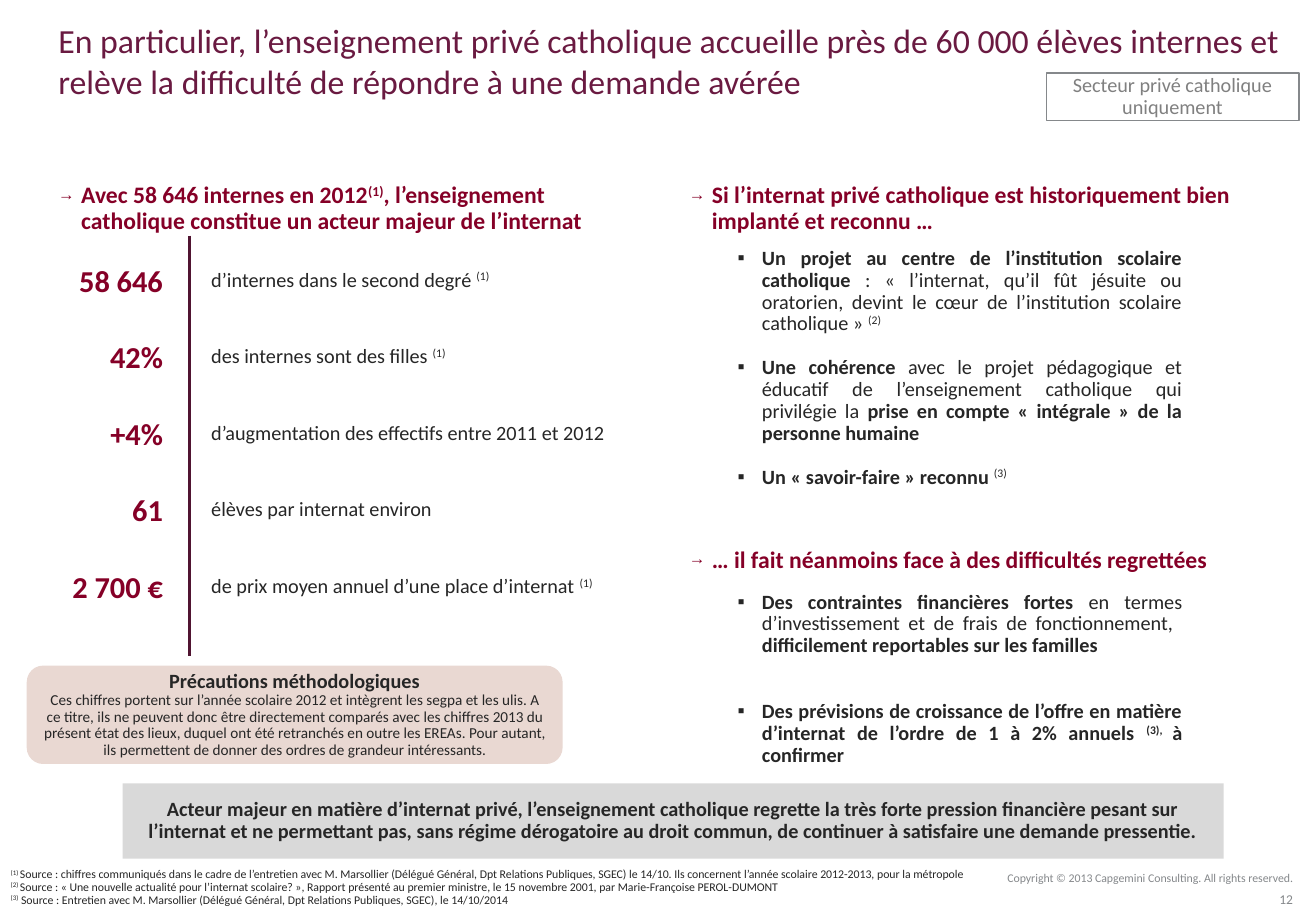
from dataclasses import dataclass
from lxml.etree import SubElement
from pptx import Presentation
from pptx.dml.color import RGBColor
from pptx.enum.shapes import MSO_CONNECTOR, MSO_SHAPE
from pptx.enum.text import MSO_ANCHOR, MSO_AUTO_SIZE, PP_ALIGN
from pptx.oxml.ns import qn
from pptx.util import Inches, Pt


@dataclass(frozen=True)
class Theme:
    font: str = "Calibri"
    plum: str = "6A1A41"
    wine: str = "850027"
    rule: str = "501431"
    ink: str = "262626"
    gray: str = "808080"
    edge: str = "85888B"
    white: str = "FFFFFF"
    band: str = "D9D9D9"
    blush: str = "E9D8D2"
    title: int = 20
    figure: int = 18
    head: int = 14
    body: int = 12
    small: int = 9
    page: int = 8
    note: int = 7
    leading: float = 0.9


class Board:
    def __init__(self, slide, theme):
        self.slide = slide
        self.theme = theme

    def place(self, shape, area):
        shape.left, shape.top, shape.width, shape.height = map(Inches, area)

    def bullet(self, para, mark, indent, scale):
        props = para._p.get_or_add_pPr()
        props.set("marL", str(Inches(indent)))
        props.set("indent", str(-Inches(indent)))
        SubElement(props, qn("a:buSzPct"), val=str(scale * 1000))
        SubElement(props, qn("a:buFont"), typeface="Arial")
        SubElement(props, qn("a:buChar"), char=mark)

    def fill(self, shape, items, size, color, align=PP_ALIGN.LEFT,
             anchor=MSO_ANCHOR.TOP, gap=0, leading=None, mark=None,
             indent=0.2, scale=100):
        frame = shape.text_frame
        frame.word_wrap = True
        frame.auto_size = MSO_AUTO_SIZE.NONE
        frame.vertical_anchor = anchor
        for index, item in enumerate(items):
            para = frame.add_paragraph() if index else frame.paragraphs[0]
            para.alignment = align
            para.line_spacing = leading or self.theme.leading
            para.space_before = Pt(gap if index else 0)
            if mark:
                self.bullet(para, mark, indent, scale)
            for text, flags in [(item, "")] if isinstance(item, str) else item:
                run = para.add_run()
                run.text = text
                font = run.font
                font.name = self.theme.font
                font.size = Pt(self.theme.small if "m" in flags else size)
                font.bold = "b" in flags
                font.color.rgb = RGBColor.from_string(color)
                if "s" in flags:
                    run._r.get_or_add_rPr().set("baseline", "30000")

    def title(self, area, text):
        shape = self.slide.shapes.title
        self.place(shape, area)
        self.fill(shape, [text], self.theme.title, self.theme.plum,
                  anchor=MSO_ANCHOR.MIDDLE, leading=1.0)

    def list(self, slot, area, items, gap):
        shape = self.slide.placeholders[slot]
        self.place(shape, area)
        self.fill(shape, items, self.theme.body, self.theme.ink,
                  PP_ALIGN.JUSTIFY, gap=gap, mark="▪")

    def text(self, area, items, size, color, **style):
        box = self.slide.shapes.add_textbox(*map(Inches, area))
        self.fill(box, items, size, color, **style)

    def head(self, area, item):
        self.text(area, [item], self.theme.head, self.theme.wine,
                  mark="→", indent=0.19, scale=70)

    def block(self, kind, area, paint, items, color, edge=None):
        shape = self.slide.shapes.add_shape(kind, *map(Inches, area))
        shape.shadow.inherit = False
        shape.fill.solid()
        shape.fill.fore_color.rgb = RGBColor.from_string(paint)
        if edge:
            shape.line.color.rgb = RGBColor.from_string(edge)
            shape.line.width = Pt(0.75)
        else:
            shape.line.fill.background()
        self.fill(shape, items, self.theme.body, color, PP_ALIGN.CENTER,
                  MSO_ANCHOR.MIDDLE)

    def line(self, ends, color, width):
        rule = self.slide.shapes.add_connector(
            MSO_CONNECTOR.STRAIGHT, *map(Inches, ends))
        rule.line.color.rgb = RGBColor.from_string(color)
        rule.line.width = Pt(width)
        SubElement(rule._element.spPr, qn("a:effectLst"))


def main():
    deck = Presentation()
    deck.slide_width, deck.slide_height = Inches(10.83), Inches(7.5)
    theme = Theme()
    board = Board(deck.slides.add_slide(deck.slide_layouts[3]), theme)

    board.title((0.38, 0.08, 10.45, 0.84),
                "En particulier, l’enseignement privé catholique accueille près de 60 000 élèves internes et relève la difficulté de répondre à une demande avérée")
    board.block(MSO_SHAPE.RECTANGLE, (8.61, 0.6, 2.08, 0.39), theme.white,
                ["Secteur privé catholique uniquement"], theme.gray, theme.edge)

    board.head((0.38, 1.46, 4.81, 0.53), [
        ("Avec 58 646 internes en 2012", "b"), ("(1)", "bs"),
        (", l’enseignement catholique constitue un acteur majeur de l’internat", "b")])
    board.head((5.57, 1.46, 4.8, 0.53), [
        ("Si l’internat privé catholique est historiquement bien implanté et reconnu …", "b")])
    board.head((5.57, 4.46, 4.8, 0.31), [
        ("… il fait néanmoins face à des difficultés regrettées", "b")])

    facts = [
        ("58 646", [("d’internes dans le second degré ", ""), ("(1)", "s")]),
        ("42%", [("des internes sont des filles ", ""), ("(1)", "s")]),
        ("+4%", "d’augmentation des effectifs entre 2011 et 2012"),
        ("61", "élèves par internat environ"),
        ("2 700 €", [("de prix moyen annuel d’une place d’internat ", ""), ("(1)", "s")]),
    ]
    for row, (figure, label) in enumerate(facts):
        top = 2.14 + 0.63 * row
        board.text((0.14, top, 1.3, 0.37), [[(figure, "b")]],
                   theme.figure, theme.wine, align=PP_ALIGN.RIGHT)
        board.text((1.64, top + 0.03, 3.86, 0.28), [label], theme.body, theme.ink)
    board.line((1.56, 1.94, 1.56, 5.4), theme.rule, 2)

    board.list(1, (5.97, 1.99, 3.86, 2.1), [
        [("Un projet au centre de l’institution scolaire catholique ", "b"),
         (": « l’internat, qu’il fût jésuite ou oratorien, devint le cœur de l’institution scolaire catholique » ", ""),
         ("(2)", "s")],
        [("Une cohérence ", "b"),
         ("avec le projet pédagogique et éducatif de l’enseignement catholique qui privilégie la ", ""),
         ("prise en compte « intégrale » de la personne humaine", "b")],
        [("Un « savoir-faire » reconnu ", "b"), ("(3)", "s")],
    ], 13)
    board.list(2, (5.97, 4.82, 3.86, 1.49), [
        [("Des contraintes financières fortes ", "b"),
         ("en termes d’investissement et de frais de fonctionnement, ", ""),
         (" difficilement reportables sur les familles ", "b")],
        [("Des prévisions de croissance de l’offre en matière d’internat de l’ordre de 1 à 2% annuels ", "b"),
         ("(3), ", "bs"), ("à confirmer", "b")],
    ], 26)

    board.block(MSO_SHAPE.ROUNDED_RECTANGLE, (0.22, 5.48, 4.41, 0.81), theme.blush, [
        [("Précautions méthodologiques", "b")],
        [("Ces chiffres portent sur l’année scolaire 2012 et intègrent les segpa et les ulis. A ce titre, ils ne peuvent donc être directement comparés avec les chiffres 2013 du présent état des lieux, duquel ont été retranchés en outre les EREAs. Pour autant, ils permettent de donner des ordres de grandeur intéressants.", "m")],
    ], theme.ink)
    board.block(MSO_SHAPE.RECTANGLE, (1.01, 6.45, 9.06, 0.62), theme.band, [
        [("Acteur majeur en matière d’internat privé, l’enseignement catholique regrette la très forte pression financière pesant sur l’internat et ne permettant pas, sans régime dérogatoire au droit commun, de continuer à satisfaire une demande pressentie.", "b")],
    ], theme.ink)

    board.text((-0.01, 7.1, 9.13, 0.42), [
        [("(1) ", "s"), ("Source : chiffres communiqués dans le cadre de l’entretien avec M. Marsollier (Délégué Général, Dpt Relations Publiques, SGEC) le 14/10. Ils concernent l’année scolaire 2012-2013, pour la métropole", "")],
        [("(2) ", "s"), ("Source : « Une nouvelle actualité pour l’internat scolaire? », Rapport présenté au premier ministre, le 15 novembre 2001, par Marie-Françoise PEROL-DUMONT", "")],
        [("(3)", "s"), (" Source : Entretien avec M. Marsollier (Délégué Général, Dpt Relations Publiques, SGEC), le 14/10/2014", "")],
    ], theme.note, theme.ink)
    footer = dict(align=PP_ALIGN.RIGHT, anchor=MSO_ANCHOR.MIDDLE, leading=1.0)
    board.text((7.57, 7.12, 3.17, 0.22),
               ["Copyright © 2013 Capgemini Consulting. All rights reserved."],
               theme.note, theme.edge, **footer)
    board.text((8.21, 7.34, 2.53, 0.13), ["12"], theme.page, theme.edge, **footer)

    deck.save("out.pptx")


if __name__ == "__main__":
    main()
